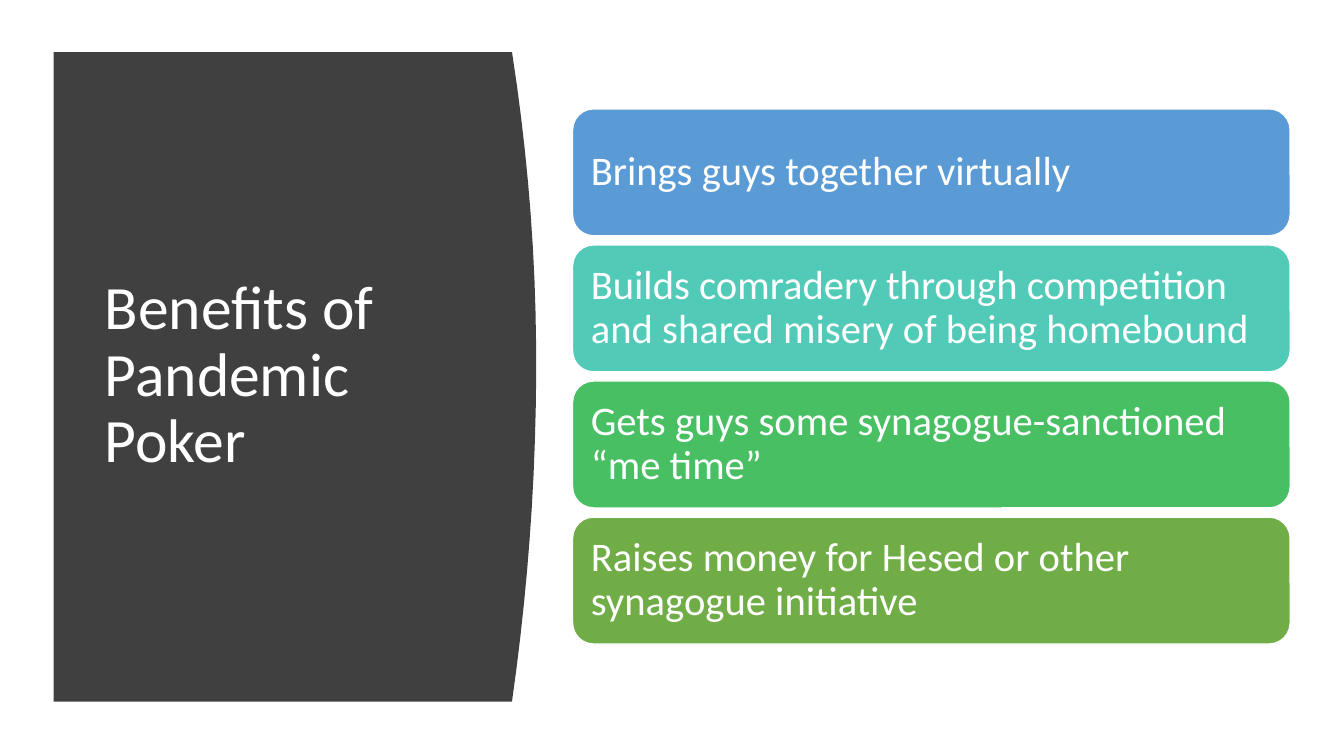
from pptx import Presentation
from pptx.dml.color import RGBColor
from pptx.enum.shapes import MSO_SHAPE
from pptx.enum.text import MSO_ANCHOR, PP_ALIGN
from pptx.util import Inches, Pt

ROUNDED = MSO_SHAPE.ROUNDED_RECTANGLE
MIDDLE = MSO_ANCHOR.MIDDLE
LEFT = PP_ALIGN.LEFT

COLORS = {
    "white": "FFFFFF",
    "panel": "404040",
    "blue": "5B9BD5",
    "teal": "52CAB8",
    "green": "49BF64",
    "olive": "70AD47",
}

BENEFITS = [
    ("Brings guys together virtually", "blue"),
    ("Builds comradery through competition and shared misery of being homebound", "teal"),
    ("Gets guys some synagogue-sanctioned “me time”", "green"),
    ("Raises money for Hesed or other synagogue initiative", "olive"),
]


class BenefitsSlide:
    """Draws styled elements on a slide divided into 100 columns and 100 rows."""

    font = "Calibri"
    title_size = 44
    card_size = 29

    def __init__(self, presentation):
        self.column = presentation.slide_width / 100
        self.row = presentation.slide_height / 100
        self.slide = presentation.slides.add_slide(presentation.slide_layouts[6])

    def color(self, name):
        return RGBColor.from_string(COLORS[name])

    def point(self, column, row):
        return round(column * self.column), round(row * self.row)

    def box(self, left, top, width, height):
        return self.point(left, top) + self.point(width, height)

    def paint(self, shape, fill):
        shape.shadow.inherit = False
        shape.fill.solid()
        shape.fill.fore_color.rgb = self.color(fill)

    def set_text(self, shape, text, size, inset):
        frame = shape.text_frame
        frame.text = text
        frame.word_wrap = True
        frame.vertical_anchor = MIDDLE
        frame.margin_left = frame.margin_right = Inches(inset)
        paragraph = frame.paragraphs[0]
        paragraph.alignment = LEFT
        paragraph.line_spacing = 0.9
        font = paragraph.runs[0].font
        font.name = self.font
        font.size = Pt(size)
        font.color.rgb = self.color("white")

    def panel(self, left, top, bottom, corner, bulge, middle, steps=20):
        edge = []
        for step in range(steps + 1):
            row = top + (bottom - top) * step / steps
            reach = middle - top if row < middle else bottom - middle
            distance = (row - middle) / reach
            edge.append(self.point(bulge - (bulge - corner) * distance ** 2, row))
        builder = self.slide.shapes.build_freeform(*self.point(left, top))
        builder.add_line_segments(edge + [self.point(left, bottom)], close=True)
        shape = builder.convert_to_shape()
        self.paint(shape, "panel")
        shape.line.fill.background()

    def title(self, text, *box):
        shape = self.slide.shapes.add_textbox(*self.box(*box))
        self.set_text(shape, text, self.title_size, 0.1)

    def card(self, text, fill, *box):
        shape = self.slide.shapes.add_shape(ROUNDED, *self.box(*box))
        self.paint(shape, fill)
        shape.line.color.rgb = self.color("white")
        shape.line.width = Pt(1)
        self.set_text(shape, text, self.card_size, 0.12)


def main():
    presentation = Presentation()
    presentation.slide_width = Inches(13.33)
    presentation.slide_height = Inches(7.5)
    slide = BenefitsSlide(presentation)
    slide.panel(left=4, top=6.9, bottom=92.8, corner=38.1, bulge=39.9, middle=48)
    slide.title("Benefits of Pandemic Poker", 7.05, 14.8, 28.05, 69.9)
    for index, (text, fill) in enumerate(BENEFITS):
        slide.card(text, fill, 42.6, 14.4 + 18 * index, 53.4, 16.8)
    presentation.save("out.pptx")


if __name__ == "__main__":
    main()
